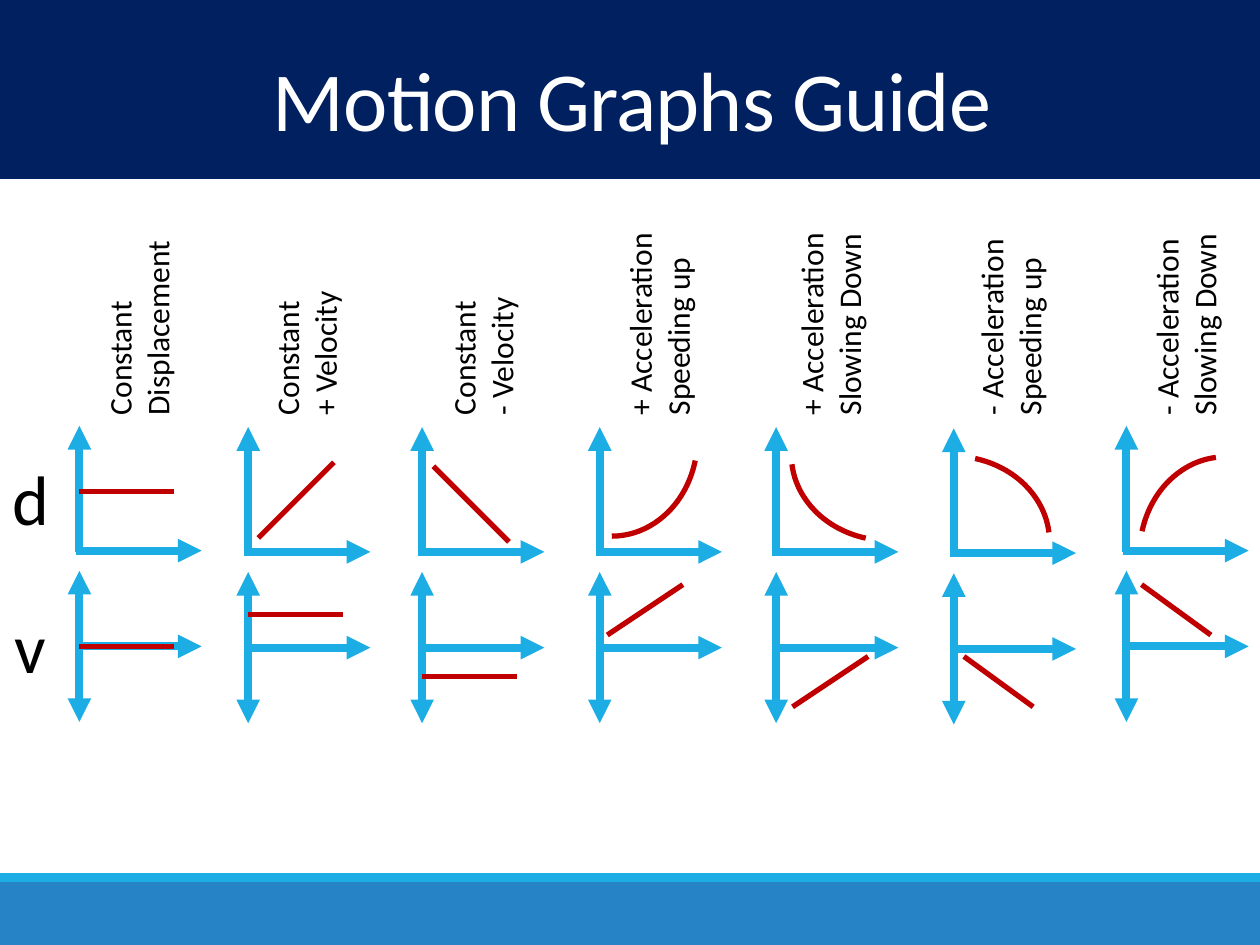
from pptx import Presentation
from pptx.dml.color import RGBColor
from pptx.enum.shapes import MSO_CONNECTOR as LINK, MSO_SHAPE as SHAPE
from pptx.enum.text import MSO_ANCHOR as ANCHOR, PP_ALIGN as ALIGN
from pptx.oxml.ns import qn
from pptx.util import Inches, Pt
from lxml.etree import SubElement

COLOURS = {
    "banner": "002060",
    "axis": "1CADE4",
    "footer": "2683C6",
    "curve": "C00000",
    "text": "000000",
    "title": "FFFFFF",
}
COLUMNS, ROWS = 100, 75
VELOCITY_DROP = 7.5
LABEL_BASE = 33.95
ARC_SIZE = (15.5, 13.6)

GRAPHS = [
    {"origin": (6.3, 43.8), "label": (11, 16.2, ["Constant Displacement"]),
     "d": (0, -4.8, 7.5, -4.8), "v": (0, 0, 7.5, 0)},
    {"origin": (19.7, 43.9), "label": (24.3, 16.2, ["Constant", "+ Velocity"]),
     "d": (0.8, -1.2, 6.8, -7.2), "v": (0, -2.6, 7.5, -2.6)},
    {"origin": (33.5, 43.9), "label": (38.3, 16.2, ["Constant", "- Velocity"]),
     "d": (0.9, -6.9, 6.9, -0.9), "v": (0, 2.3, 7.5, 2.3)},
    {"origin": (47.6, 43.9), "label": (52.3, 16.6, ["+ Acceleration", "Speeding up"]),
     "arc": (-6.8, -15.9, 90, 284.8, 360), "v": (0.6, -1, 6.6, -5)},
    {"origin": (61.6, 43.9), "label": (65.9, 16.6, ["+ Acceleration", "Slowing Down"]),
     "arc": (1.2, -14.6, 180, 285.6, 354.5), "v": (1.3, 4.7, 7.3, 0.7)},
    {"origin": (75.7, 44), "label": (80.2, 16.6, ["- Acceleration", "Speeding up"]),
     "arc": (-7.9, -7.8, 0, 285.6, 354.5), "v": (0.8, 0.6, 6.3, 4.6)},
    {"origin": (89.4, 43.8), "label": (94.1, 16.6, ["- Acceleration", "Slowing Down"]),
     "arc": (0.1, -6.6, 270, 285.6, 354.5), "v": (1.2, -4.9, 6.7, -0.9)},
]


class Sheet:
    font = "Calibri"

    def __init__(self, deck):
        self.deck = deck
        self.page = deck.slides.add_slide(deck.slide_layouts[5])

    def grid(self, *lengths):
        units = (self.deck.slide_width / COLUMNS, self.deck.slide_height / ROWS)
        return [round(length * units[i % 2]) for i, length in enumerate(lengths)]

    def colour(self, name):
        return RGBColor.from_string(COLOURS[name])

    def add_span(self, para, text, size, colour="text"):
        span = para.add_run()
        span.text = text
        span.font.name = self.font
        span.font.size = Pt(size)
        span.font.color.rgb = self.colour(colour)
        return span

    def bar(self, top, height, colour):
        bar = self.page.shapes.add_shape(SHAPE.RECTANGLE, *self.grid(0, top, COLUMNS, height))
        bar.shadow.inherit = False
        bar.fill.solid()
        bar.fill.fore_color.rgb = self.colour(colour)
        bar.line.fill.background()

    def title(self, text, *place):
        box = self.page.shapes.title
        self.page.shapes._spTree.append(box._element)
        box.left, box.top, box.width, box.height = self.grid(*place)
        box.text_frame.vertical_anchor = ANCHOR.MIDDLE
        para = box.text_frame.paragraphs[0]
        para.alignment = ALIGN.CENTER
        para.line_spacing = 0.85
        span = self.add_span(para, text, 48, "title")
        span.font._element.set("spc", "-50")

    def text(self, lines, place, size, wrap=True, turn=0):
        box = self.page.shapes.add_textbox(*self.grid(*place))
        box.rotation = turn
        frame = box.text_frame
        frame.word_wrap = wrap
        for i, line in enumerate(lines):
            para = frame.add_paragraph() if i else frame.paragraphs[0]
            self.add_span(para, line, size)

    def line(self, x, y, ends, colour, weight, heads=()):
        left, top, right, bottom = ends
        points = self.grid(x + left, y + top, x + right, y + bottom)
        link = self.page.shapes.add_connector(LINK.STRAIGHT, *points)
        link.line.color.rgb = self.colour(colour)
        link.line.width = Pt(weight)
        for head in heads:
            SubElement(link.line._get_or_add_ln(), qn("a:" + head), type="triangle")
        SubElement(link._element.spPr, qn("a:effectLst"))

    def arc(self, x, y, turn, start, end):
        arc = self.page.shapes.add_shape(SHAPE.ARC, *self.grid(x, y, *ARC_SIZE))
        arc.adjustments[0] = start * 0.6
        arc.adjustments[1] = end % 360 * 0.6
        arc.rotation = turn
        arc.shadow.inherit = False
        arc.fill.background()
        arc.line.color.rgb = self.colour("curve")
        arc.line.width = Pt(3)

    def label(self, centre, width, lines):
        height = 7.1
        middle = LABEL_BASE - width / 2
        place = (centre - width / 2, middle - height / 2, width, height)
        self.text(lines, place, 18, turn=270)

    def graph(self, origin, label, v, d=None, arc=None):
        x, y = origin
        centre = y + VELOCITY_DROP
        across = (-0.3, 0, 9.7, 0)
        self.line(x, y, (0, 0, 0, -10), "axis", 4.5, ["tailEnd"])
        self.line(x, y - 0.1, across, "axis", 4.5, ["tailEnd"])
        self.line(x, centre, (0, 6, 0, -6), "axis", 4.5, ["headEnd", "tailEnd"])
        self.line(x, centre, across, "axis", 4.5, ["tailEnd"])
        self.label(*label)
        if d:
            self.line(x, y, d, "curve", 3)
        if arc:
            left, top, *bend = arc
            self.arc(x + left, y + top, *bend)
        self.line(x, centre, v, "curve", 3)


def main():
    deck = Presentation()
    deck.slide_width, deck.slide_height = Inches(10), Inches(7.5)
    sheet = Sheet(deck)
    sheet.bar(70, 5, "footer")
    sheet.bar(69.3, 0.7, "axis")
    sheet.bar(0, 14.2, "banner")
    sheet.title("Motion Graphs Guide", 0.3, 4.2, 99.7, 8.4)
    sheet.text(["d"], (0, 35.7, 4.9, 7.7), 40, wrap=False)
    sheet.text(["v"], (0.2, 47.4, 4.5, 7.7), 40, wrap=False)
    for graph in GRAPHS:
        sheet.graph(**graph)
    deck.save("out.pptx")


if __name__ == "__main__":
    main()
